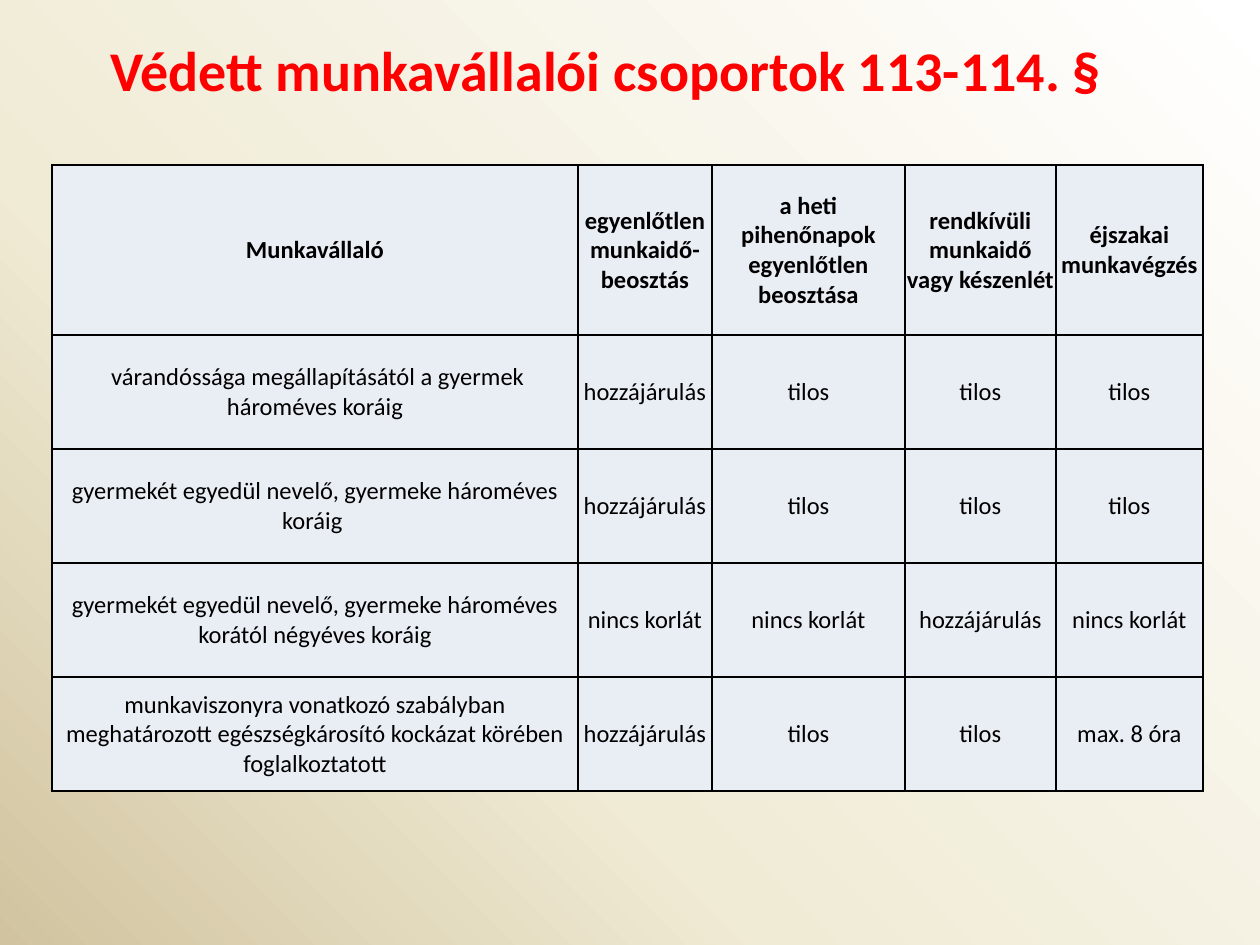
from lxml import etree
from pptx import Presentation
from pptx.dml.color import RGBColor
from pptx.enum.text import MSO_ANCHOR, PP_ALIGN
from pptx.oxml.ns import qn
from pptx.util import Emu, Pt

CENTER, MIDDLE = PP_ALIGN.CENTER, MSO_ANCHOR.MIDDLE
PX_PER_INCH = 126
FONT = "Calibri"
RED, BLACK, CELL_FILL = "FF0000", "000000", "E9EDF4"
BACKGROUND_STOPS = [(0, "FFFFFF"), (65, "F0EBD5"), (100, "D1C39F")]
BACKGROUND_ANGLE = 225  # counter-clockwise: from top right to bottom left

TITLE = "Védett munkavállalói csoportok 113-114. §"
COLUMN_WIDTHS = [526, 134, 193, 151, 147]
ROW_HEIGHTS = [170] + [114] * 4
ROWS = [
    ["Munkavállaló", "egyenlőtlen munkaidő-beosztás",
     "a heti pihenőnapok egyenlőtlen beosztása",
     "rendkívüli munkaidő vagy készenlét", "éjszakai munkavégzés"],
    [" várandóssága megállapításától a gyermek hároméves koráig",
     "hozzájárulás", "tilos", "tilos", "tilos"],
    ["gyermekét egyedül nevelő, gyermeke hároméves koráig ",
     "hozzájárulás", "tilos", "tilos", "tilos"],
    ["gyermekét egyedül nevelő, gyermeke hároméves korától négyéves koráig",
     "nincs korlát", "nincs korlát", "hozzájárulás", "nincs korlát"],
    ["munkaviszonyra vonatkozó szabályban meghatározott "
     "egészségkárosító kockázat körében foglalkoztatott",
     "hozzájárulás", "tilos", "tilos", "max. 8 óra"],
]


def px(length):
    return Emu(round(length * 914400 / PX_PER_INCH))


def color(value):
    return RGBColor.from_string(value)


def set_attributes(target, values):
    for name, value in values.items():
        setattr(target, name, value)


def add_color(parent, value):
    etree.SubElement(parent, qn("a:srgbClr"), val=value)


def write_text(frame, text, size, text_color, bold):
    para = frame.paragraphs[0]
    para.alignment = CENTER
    span = para.add_run()
    span.text = text
    set_attributes(span.font, {"name": FONT, "size": Pt(size), "bold": bold})
    span.font.color.rgb = color(text_color)


def paint_background(page):
    fill = page.background.fill
    fill.gradient()
    fill.gradient_angle = BACKGROUND_ANGLE
    stops = next(page.background._cSld.iter(qn("a:gsLst")))
    for stop in list(stops):
        stops.remove(stop)
    for position, value in BACKGROUND_STOPS:
        stop = etree.SubElement(stops, qn("a:gs"), pos=str(position * 1000))
        add_color(stop, value)


def add_title(page):
    box = page.shapes.add_textbox(px(24), px(6), px(1164), px(126))
    set_attributes(box.text_frame,
                   {"word_wrap": True, "vertical_anchor": MIDDLE})
    write_text(box.text_frame, TITLE, 32, RED, True)


def add_borders(cell):
    properties = cell._tc.get_or_add_tcPr()
    for side in ("lnL", "lnR", "lnT", "lnB"):
        line = etree.SubElement(properties, qn(f"a:{side}"), w=str(Pt(1)))
        add_color(etree.SubElement(line, qn("a:solidFill")), BLACK)


def format_cell(cell, text, bold):
    set_attributes(cell, {"vertical_anchor": MIDDLE, "margin_left": px(1),
                          "margin_right": px(1), "margin_top": px(1),
                          "margin_bottom": 0})
    write_text(cell.text_frame, text, 14, BLACK, bold)
    add_borders(cell)
    cell.fill.solid()
    cell.fill.fore_color.rgb = color(CELL_FILL)


def add_protection_table(page):
    table = page.shapes.add_table(
        len(ROWS), len(COLUMN_WIDTHS), px(52), px(165),
        px(sum(COLUMN_WIDTHS)), px(sum(ROW_HEIGHTS))).table
    for column, width in zip(table.columns, COLUMN_WIDTHS):
        column.width = px(width)
    for row, height in zip(table.rows, ROW_HEIGHTS):
        row.height = px(height)
    for row_index, texts in enumerate(ROWS):
        for column_index, text in enumerate(texts):
            format_cell(table.cell(row_index, column_index), text,
                        bold=row_index == 0)


def main():
    deck = Presentation()
    set_attributes(deck, {"slide_width": px(1260), "slide_height": px(945)})
    page = deck.slides.add_slide(deck.slide_layouts[6])
    paint_background(page)
    add_title(page)
    add_protection_table(page)
    deck.save("out.pptx")


if __name__ == "__main__":
    main()
